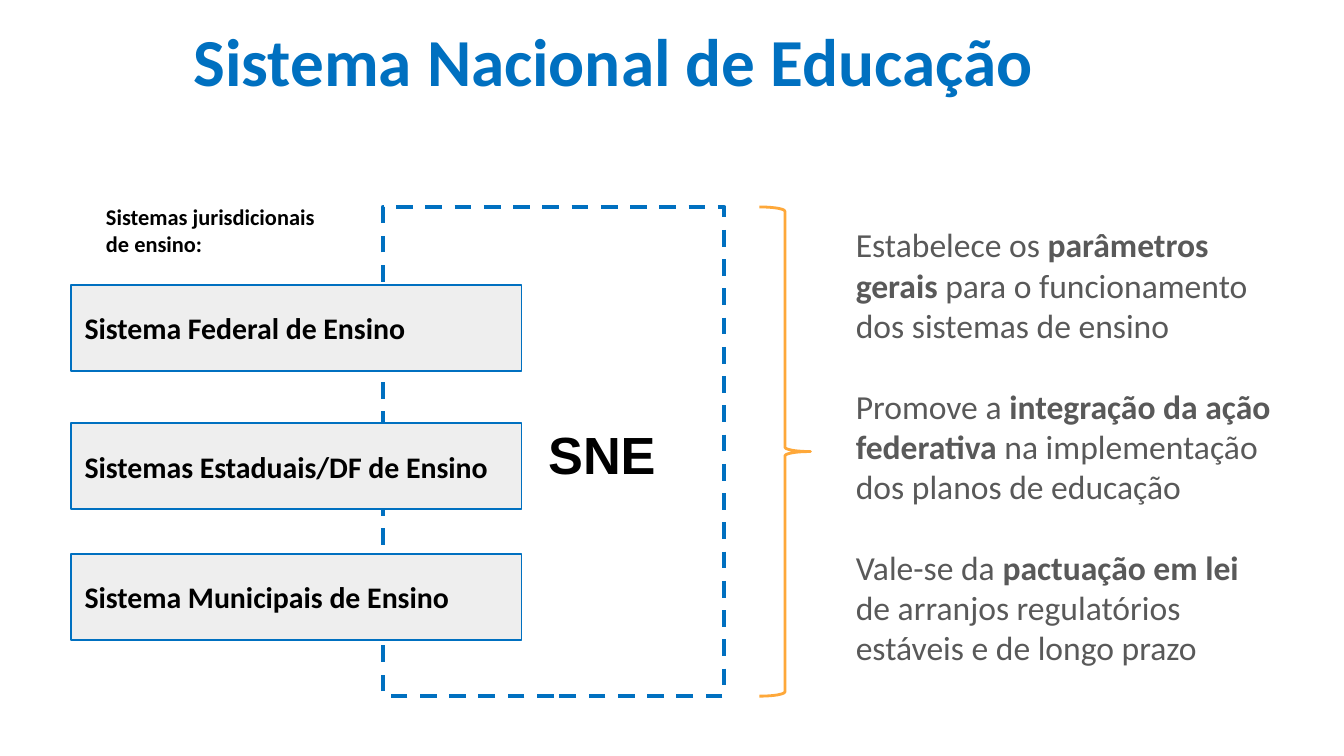
from pptx import Presentation
from pptx.dml.color import RGBColor
from pptx.enum import dml, shapes, text
from pptx.util import Pt

BLUE = RGBColor(0x00, 0x70, 0xC0)
ORANGE = RGBColor(0xFE, 0xA8, 0x3A)
LIGHT = RGBColor(0xEE, 0xEE, 0xEE)
GRAY = RGBColor(0x59, 0x59, 0x59)
BLACK = RGBColor(0x00, 0x00, 0x00)

FRAME_TOP, FRAME_HEIGHT = 110.9, 262.1
SYSTEMS = [
    (152.6, "Sistema Federal de Ensino"),
    (226.7, "Sistemas Estaduais/DF de Ensino"),
    (296.7, "Sistema Municipais de Ensino"),
]
ROLES = [
    [("Estabelece os ", False), ("parâmetros gerais ", True),
     ("para o funcionamento dos sistemas de ensino", False)],
    [("Promove a ", False), ("integração da ação federativa ", True),
     ("na implementação dos planos de educação", False)],
    [("Vale-se da", False), (" pactuação em lei", True),
     (" de arranjos regulatórios estáveis e de longo prazo", False)],
]


class SlideBuilder:
    font = "Calibri"

    def __init__(self, slide):
        self.slide = slide

    def add_text(self, shape, paragraphs, size, color, font=None, gap=0,
                 anchor=text.MSO_ANCHOR.TOP, align=text.PP_ALIGN.LEFT, wrap=True):
        frame = shape.text_frame
        frame.word_wrap = wrap
        frame.auto_size = text.MSO_AUTO_SIZE.NONE
        frame.vertical_anchor = anchor
        for index, runs in enumerate(paragraphs):
            paragraph = frame.add_paragraph() if index else frame.paragraphs[0]
            paragraph.alignment = align
            paragraph.space_before = Pt(gap if index else 0)
            for words, bold in runs:
                run = paragraph.add_run()
                run.text = words
                run.font.name = font or self.font
                run.font.size = Pt(size)
                run.font.bold = bold
                run.font.color.rgb = color

    def title(self, box, words):
        shape = self.slide.shapes.title
        shape.left, shape.top, shape.width, shape.height = map(Pt, box)
        self.add_text(shape, [[(words, True)]], 36, BLUE,
                      anchor=text.MSO_ANCHOR.MIDDLE, align=text.PP_ALIGN.JUSTIFY)
        shape.text_frame.paragraphs[0].line_spacing = 0.9

    def outline(self, kind, box, color, width, fill=None, dash=None):
        shape = self.slide.shapes.add_shape(kind, *map(Pt, box))
        shape.shadow.inherit = False
        if fill is None:
            shape.fill.background()
        else:
            shape.fill.solid()
            shape.fill.fore_color.rgb = fill
        shape.line.color.rgb = color
        shape.line.width = Pt(width)
        if dash is not None:
            shape.line.dash_style = dash
        return shape

    def bar(self, box, words):
        shape = self.outline(shapes.MSO_SHAPE.RECTANGLE, box, BLUE, 1, LIGHT)
        self.add_text(shape, [[(words, True)]], 16, BLACK,
                      anchor=text.MSO_ANCHOR.MIDDLE)

    def textbox(self, box, paragraphs, size, color, **style):
        shape = self.slide.shapes.add_textbox(*map(Pt, box))
        self.add_text(shape, paragraphs, size, color, **style)


def main():
    presentation = Presentation()
    presentation.slide_width = Pt(720)
    presentation.slide_height = Pt(405)
    slide = presentation.slides.add_slide(presentation.slide_layouts[5])
    builder = SlideBuilder(slide)

    builder.title((96.5, 9.4, 497.5, 50.4), "Sistema Nacional de Educação")
    builder.outline(shapes.MSO_SHAPE.RECTANGLE,
                    (205.2, FRAME_TOP, 182.9, FRAME_HEIGHT), BLUE, 2.25,
                    dash=dml.MSO_LINE.DASH)
    for top, words in SYSTEMS:
        builder.bar((38.2, top, 241.2, 46), words)
    builder.textbox((49.7, 105.1, 128.2, 36),
                    [[("Sistemas jurisdicionais de ensino:", True)]], 12, BLACK)
    builder.textbox((451.4, 116.6, 239, 247), ROLES, 18, GRAY, gap=21.6)
    builder.outline(shapes.MSO_SHAPE.RIGHT_BRACE,
                    (406.8, FRAME_TOP, 27.4, FRAME_HEIGHT), ORANGE, 1.5)
    builder.textbox((286.6, 222.5, 72.7, 41), [[("SNE", True)]], 28, BLACK,
                    font="Arial", wrap=False)
    presentation.save("out.pptx")


if __name__ == "__main__":
    main()
